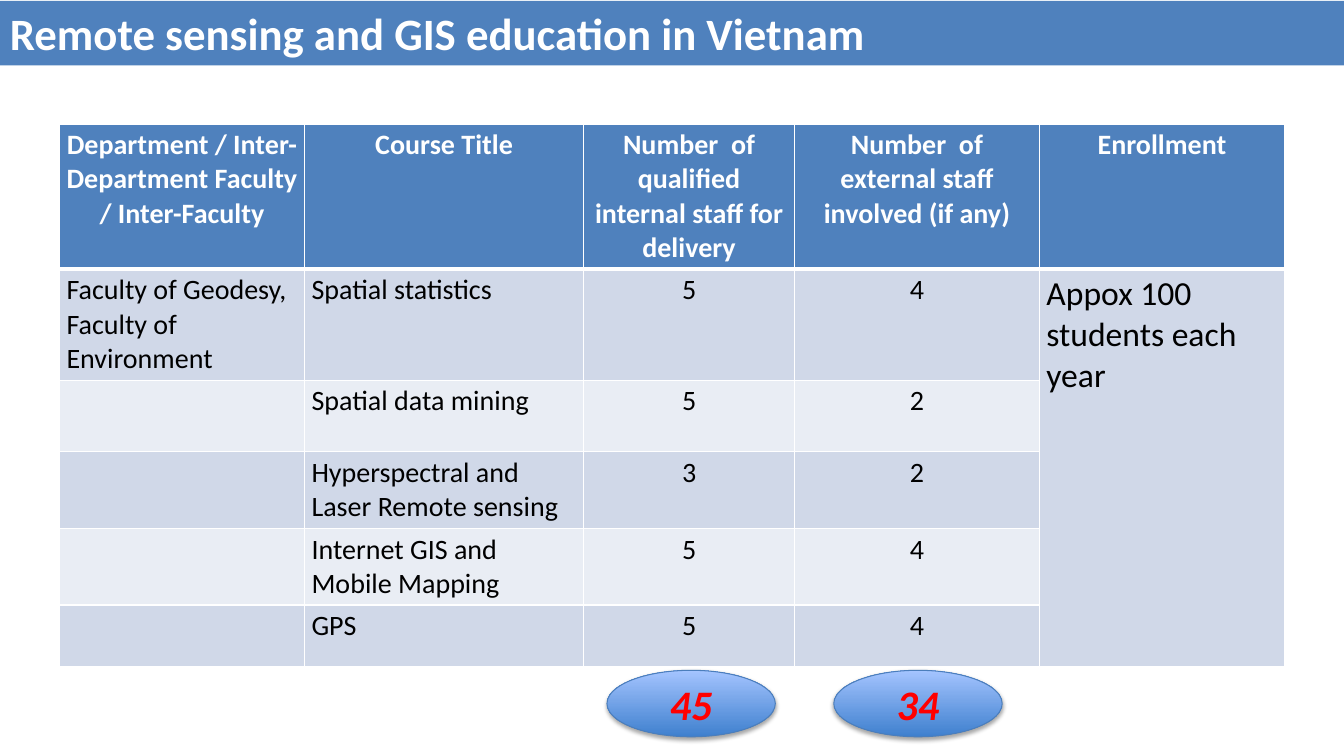
from dataclasses import dataclass

from lxml import etree
from pptx import Presentation
from pptx.dml.color import RGBColor as RGB
from pptx.enum.shapes import MSO_SHAPE as Shape
from pptx.enum.text import MSO_ANCHOR as Anchor, MSO_AUTO_SIZE as AutoSize, PP_ALIGN as Align
from pptx.oxml.ns import qn
from pptx.util import Inches, Pt


@dataclass(frozen=True)
class Theme:
    font: str = "Calibri"
    blue: str = "4F81BD"
    bands: tuple = ("D0D8E8", "E9EDF4")
    white: str = "FFFFFF"
    black: str = "000000"
    red: str = "FF0000"
    outline: str = "4B7EBC"
    gradient: tuple = ("3F80CE", "A4C4FF")
    title: int = 32
    total: int = 30
    note: int = 24
    body: int = 20


THEME = Theme()
TITLE = "Remote sensing and GIS education in Vietnam"
HEADERS = ["Department / Inter-Department Faculty / Inter-Faculty", "Course Title",
           "Number  of qualified internal staff for delivery",
           "Number  of external staff involved (if any)", "Enrollment"]
COURSES = [
    ["Faculty of Geodesy, Faculty of Environment", "Spatial statistics", "5", "4",
     "Appox 100 students each year"],
    ["", "Spatial data mining", "5", "2", ""],
    ["", "Hyperspectral and Laser Remote sensing", "3", "2", ""],
    ["", "Internet GIS and Mobile Mapping", "5", "4", ""],
    ["", "GPS", "5", "4", ""],
]
TOTALS = ["45", "34"]
COL_WIDTHS = [2.43, 2.77, 2.09, 2.43, 2.43]
ROW_HEIGHTS = [1.12, 1.07, 0.71, 0.61, 0.61, 0.61]
STAFF_COLS = (2, 3)
ENROLLMENT_COL = 4


def write(tf, text, color, size, align=Align.LEFT, **formats):
    p = tf.paragraphs[0]
    p.alignment = align
    r = p.add_run()
    r.text = text
    r.font.color.rgb = RGB.from_string(color)
    for name, value in {"name": THEME.font, "size": Pt(size), **formats}.items():
        setattr(r.font, name, value)


def add_border(cell, side, width):
    ln = etree.SubElement(cell._tc.get_or_add_tcPr(), qn(f"a:ln{side}"), w=str(Pt(width)))
    fill = etree.SubElement(ln, qn("a:solidFill"))
    etree.SubElement(fill, qn("a:srgbClr"), val=THEME.white)


def add_shadow(sp):
    sp.shadow.inherit = False
    effects = sp._element.spPr.find(qn("a:effectLst"))
    shadow = etree.SubElement(effects, qn("a:outerShdw"), blurRad=str(Pt(3.1)),
                              dist=str(Pt(1.8)), dir="5400000", rotWithShape="0")
    color = etree.SubElement(shadow, qn("a:srgbClr"), val=THEME.black)
    etree.SubElement(color, qn("a:alpha"), val="35000")


def add_title(s, x, y, w, h):
    sp = s.shapes.add_shape(Shape.RECTANGLE, *map(Inches, (x, y, w, h)))
    sp.shadow.inherit = False
    sp.fill.solid()
    sp.fill.fore_color.rgb = RGB.from_string(THEME.blue)
    sp.line.fill.background()
    tf = sp.text_frame
    for name, value in {"word_wrap": True, "vertical_anchor": Anchor.TOP,
                        "auto_size": AutoSize.SHAPE_TO_FIT_TEXT}.items():
        setattr(tf, name, value)
    write(tf, TITLE, THEME.white, THEME.title, bold=True)


def style_cell(cell, row, col, text):
    header = row == 0
    margins = {"margin_left": 0.07, "margin_right": 0.07,
               "margin_top": 0.04, "margin_bottom": 0.04}
    for name, value in margins.items():
        setattr(cell, name, Inches(value))
    widths = {"L": 1, "R": 1, "T": 3 if row == 1 else 1, "B": 3 if header else 1}
    for side, width in widths.items():
        add_border(cell, side, width)
    cell.fill.solid()
    cell.fill.fore_color.rgb = RGB.from_string(
        THEME.blue if header else THEME.bands[(row - 1) % 2])
    if text:
        write(cell.text_frame, text,
              THEME.white if header else THEME.black,
              THEME.note if col == ENROLLMENT_COL and not header else THEME.body,
              Align.CENTER if header or col in STAFF_COLS else Align.LEFT,
              bold=header)


def add_courses(s, x, y, w, h):
    rows = [HEADERS, *COURSES]
    table = s.shapes.add_table(len(rows), len(HEADERS), *map(Inches, (x, y, w, h))).table
    for column, width in zip(table.columns, COL_WIDTHS):
        column.width = Inches(width)
    for row, height in zip(table.rows, ROW_HEIGHTS):
        row.height = Inches(height)
    for i, texts in enumerate(rows):
        for j, text in enumerate(texts):
            style_cell(table.cell(i, j), i, j, text)
    table.cell(1, ENROLLMENT_COL).merge(table.cell(len(COURSES), ENROLLMENT_COL))


def add_totals(s, x, y, w, h, pitch):
    for i, total in enumerate(TOTALS):
        sp = s.shapes.add_shape(Shape.OVAL, *map(Inches, (x + i * pitch, y, w, h)))
        sp.fill.gradient()
        sp.fill.gradient_angle = 90
        for stop, color in zip(sp.fill.gradient_stops, THEME.gradient):
            stop.color.rgb = RGB.from_string(color)
        sp.line.color.rgb = RGB.from_string(THEME.outline)
        sp.line.width = Pt(0.75)
        add_shadow(sp)
        sp.text_frame.vertical_anchor = Anchor.MIDDLE
        write(sp.text_frame, total, THEME.red, THEME.total, Align.CENTER,
              bold=True, italic=True)


def main():
    prs = Presentation()
    prs.slide_width, prs.slide_height = Inches(13.33), Inches(7.5)
    s = prs.slides.add_slide(prs.slide_layouts[6])
    add_courses(s, 0.59, 1.23, sum(COL_WIDTHS), sum(ROW_HEIGHTS))
    add_title(s, 0, 0.01, 13.33, 0.64)
    add_totals(s, 6.02, 6.65, 1.67, 0.66, pitch=2.25)
    prs.save("out.pptx")


if __name__ == "__main__":
    main()
